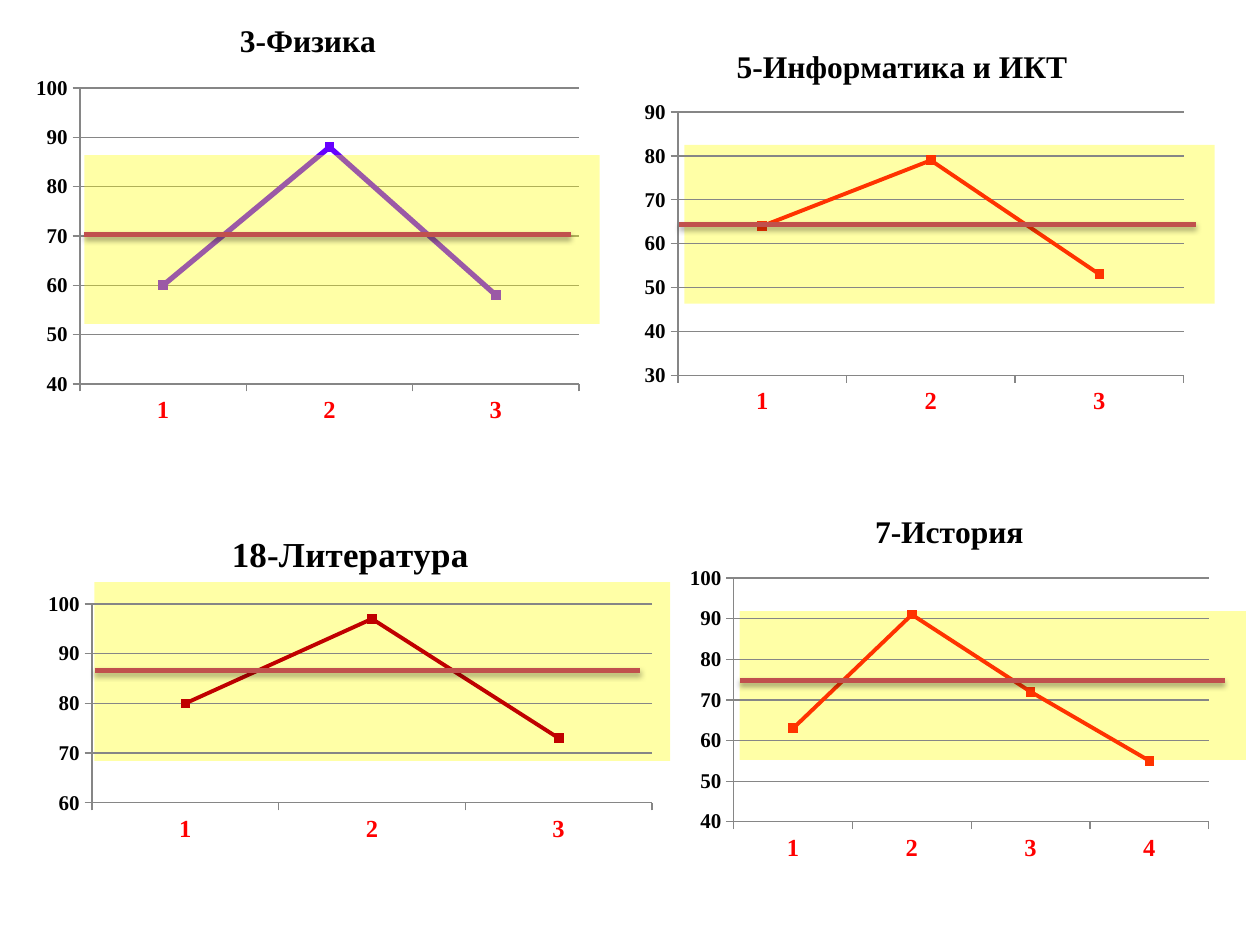
from dataclasses import dataclass

from lxml.etree import SubElement
from pptx import Presentation
from pptx.chart.data import CategoryChartData
from pptx.dml.color import RGBColor
from pptx.enum.chart import XL_CHART_TYPE as ChartType, XL_MARKER_STYLE as Marker
from pptx.enum.chart import XL_TICK_MARK as TickMark
from pptx.enum.shapes import MSO_CONNECTOR as Connector, MSO_SHAPE as Shape
from pptx.oxml import parse_xml
from pptx.oxml.ns import nsdecls, qn
from pptx.util import Pt

BLACK = RGBColor(0x00, 0x00, 0x00)
RED = RGBColor(0xFF, 0x00, 0x00)
YELLOW = RGBColor(0xFF, 0xFF, 0x00)
GREY = RGBColor(0x86, 0x86, 0x86)
BRICK = RGBColor(0xC0, 0x50, 0x4D)
VIOLET = RGBColor(0x66, 0x00, 0xFF)
ORANGE = RGBColor(0xFF, 0x33, 0x00)
DARK_RED = RGBColor(0xC0, 0x00, 0x00)
FONT = "Times New Roman"


@dataclass
class Panel:
    """One subject: its chart, plot and band boxes, and its mean line, in points."""

    title: str
    values: tuple
    scale: tuple
    color: RGBColor
    box: tuple
    plot: tuple
    band: tuple
    mean: tuple
    title_size: int = 18
    line_width: float = 2.25
    band_in_front: bool = False


PHYSICS = Panel("3-Физика", (60, 88, 58), (40, 100), VIOLET,
                (14.4, 0, 323.3, 247.7), (45.7, 50.3, 285.1, 169.1),
                (48.2, 88.6, 294.5, 96.5), (48.2, 326.2, 133.9),
                line_width=3, band_in_front=True)
INFORMATICS = Panel("5-Информатика и ИКТ", (64, 79, 53), (30, 90), ORANGE,
                    (354.2, 15.1, 322.6, 226.8), (387.4, 64, 289.1, 150.3),
                    (391, 82.8, 303.1, 90.7), (388.1, 683.3, 128.2))
HISTORY = Panel("7-История", (63, 91, 72, 55), (40, 100), ORANGE,
                (388.1, 281.5, 308.9, 215.3), (419.4, 330.3, 271.4, 139.4),
                (422.6, 349.2, 289.4, 85), (422.6, 699.8, 388.8))
LITERATURE = Panel("18-Литература", (80, 97, 73), (60, 100), DARK_RED,
                   (20.2, 292.3, 360, 193), (52.6, 345.1, 320, 113.7),
                   (54, 332.6, 329, 102.2), (54, 365.8, 383), title_size=20)
PANELS = (PHYSICS, INFORMATICS, HISTORY, LITERATURE)


def style_font(font, size, color):
    """Set a bold chart font."""
    font.name, font.size, font.bold = FONT, Pt(size), True
    font.color.rgb = color


def style_line(line, color, width):
    """Set the colour and width of a line."""
    line.color.rgb = color
    line.width = Pt(width)


def add_band(slide, box):
    """Place a translucent yellow band in the box."""
    band = slide.shapes.add_shape(Shape.RECTANGLE, *map(Pt, box))
    band.shadow.inherit = False
    band.fill.solid()
    band.fill.fore_color.rgb = YELLOW
    color = band.fill._xPr.find(qn("a:solidFill"))[0]
    SubElement(color, qn("a:alpha"), val="35000")
    band.line.fill.background()


def add_mean_line(slide, left, right, top):
    """Draw a horizontal mean line with a soft shadow."""
    line = slide.shapes.add_connector(
        Connector.STRAIGHT, Pt(left), Pt(top), Pt(right), Pt(top))
    style_line(line.line, BRICK, 3)
    line._element.spPr.append(parse_xml(
        f'<a:effectLst {nsdecls("a")}><a:outerShdw blurRad="40000" dist="23000" '
        'dir="5400000" rotWithShape="0"><a:srgbClr val="000000">'
        '<a:alpha val="35000"/></a:srgbClr></a:outerShdw></a:effectLst>'))


def set_plot_box(chart, box, plot):
    """Fix the inner plot area as fractions of the chart box."""
    left, top, width, height = box
    fractions = {"x": (plot[0] - left) / width, "y": (plot[1] - top) / height,
                 "w": plot[2] / width, "h": plot[3] / height}
    plot_area = chart._chartSpace.chart.plotArea
    for layout in plot_area.findall(qn("c:layout")):
        plot_area.remove(layout)
    places = "".join(f'<c:{key} val="{value:.3f}"/>' for key, value in fractions.items())
    plot_area.insert(0, parse_xml(
        f'<c:layout {nsdecls("c")}><c:manualLayout><c:layoutTarget val="inner"/>'
        f'<c:xMode val="edge"/><c:yMode val="edge"/>{places}'
        '</c:manualLayout></c:layout>'))


def style_axes(chart, scale):
    """Set the scale, grid, ticks and labels of both axes."""
    value_axis, category_axis = chart.value_axis, chart.category_axis
    value_axis.minimum_scale, value_axis.maximum_scale = scale
    value_axis.major_unit = 10
    value_axis.has_major_gridlines = True
    style_line(value_axis.major_gridlines.format.line, GREY, 0.75)
    for axis, size, color in ((value_axis, 12, BLACK), (category_axis, 14, RED)):
        axis.major_tick_mark = TickMark.OUTSIDE
        axis.minor_tick_mark = TickMark.NONE
        style_line(axis.format.line, GREY, 0.75)
        style_font(axis.tick_labels.font, size, color)


def add_line_chart(slide, panel):
    """Place the titled line chart of a panel in its box."""
    data = CategoryChartData()
    data.categories = [str(number + 1) for number in range(len(panel.values))]
    data.add_series("Series 1", panel.values)
    chart = slide.shapes.add_chart(
        ChartType.LINE_MARKERS, *map(Pt, panel.box), data).chart
    chart.has_legend = False
    chart.font.name, chart.font.size = "Calibri", Pt(10)
    chart.has_title = True
    title = chart.chart_title.text_frame
    title.text = panel.title
    style_font(title.paragraphs[0].runs[0].font, panel.title_size, BLACK)
    chart.chart_title.include_in_layout = False
    style_axes(chart, panel.scale)
    set_plot_box(chart, panel.box, panel.plot)
    plot = chart.plots[0]
    plot.vary_by_categories = False
    series = plot.series[0]
    series.smooth = False
    style_line(series.format.line, panel.color, panel.line_width)
    marker = series.marker
    marker.style, marker.size = Marker.SQUARE, 5
    marker.format.fill.solid()
    marker.format.fill.fore_color.rgb = panel.color
    style_line(marker.format.line, panel.color, 0.75)


def add_panel(slide, panel):
    """Place a chart, its front band if any, and its mean line."""
    add_line_chart(slide, panel)
    if panel.band_in_front:
        add_band(slide, panel.band)
    add_mean_line(slide, *panel.mean)


def main():
    """Build the slide and save it."""
    presentation = Presentation()
    presentation.slide_width, presentation.slide_height = Pt(720), Pt(540)
    slide = presentation.slides.add_slide(presentation.slide_layouts[6])
    for panel in PANELS:
        if not panel.band_in_front:
            add_band(slide, panel.band)
    for panel in PANELS:
        add_panel(slide, panel)
    presentation.save("out.pptx")


if __name__ == "__main__":
    main()
